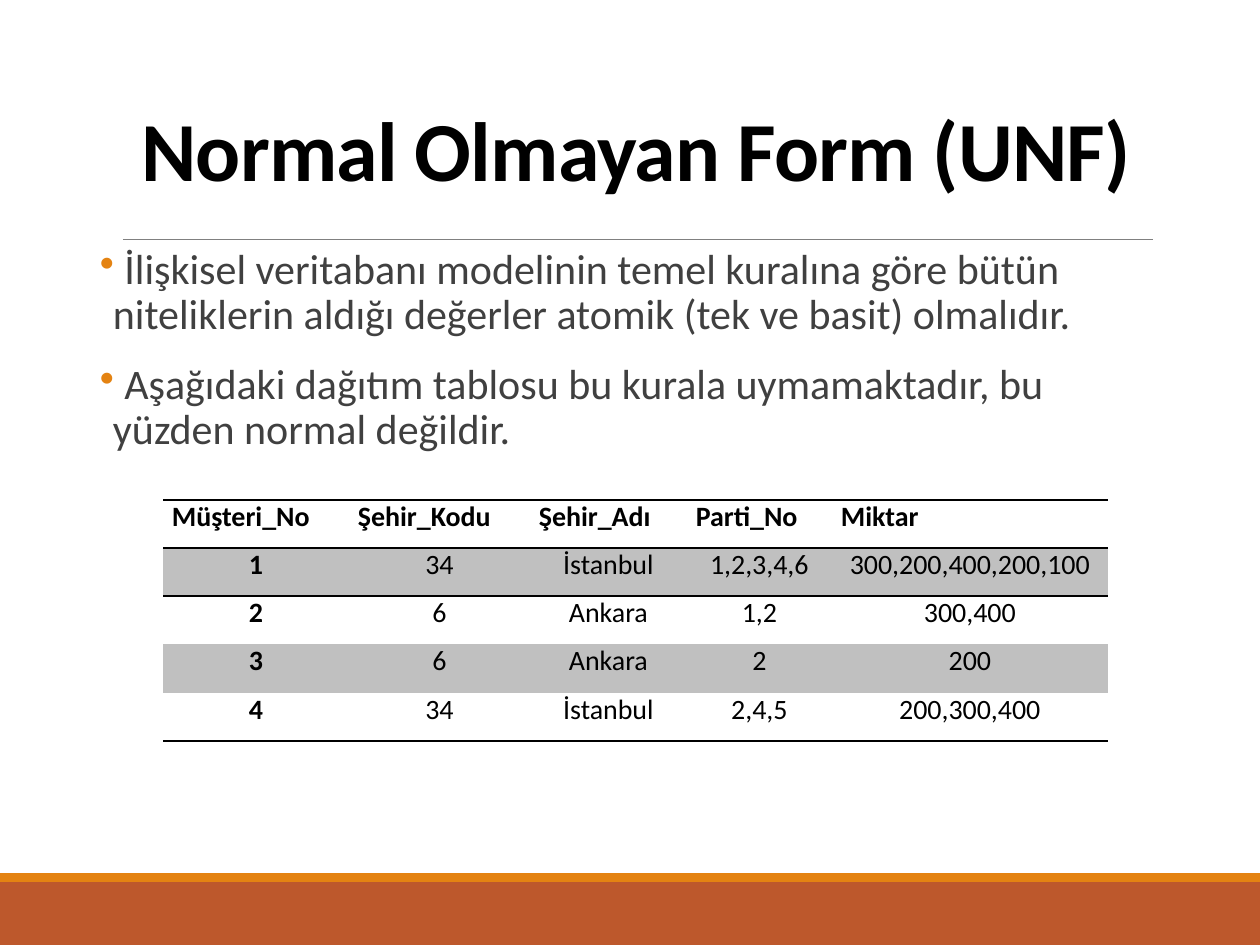
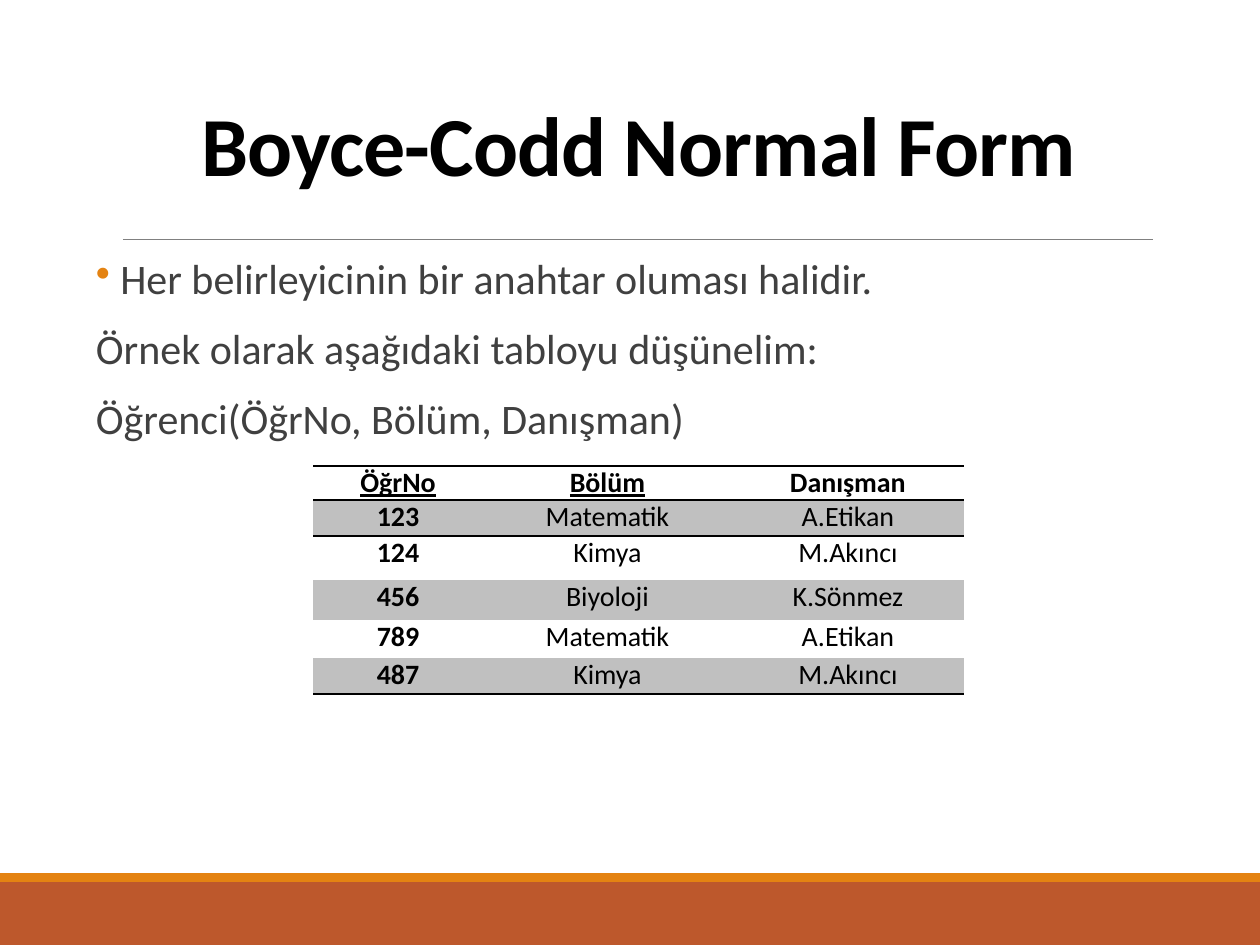
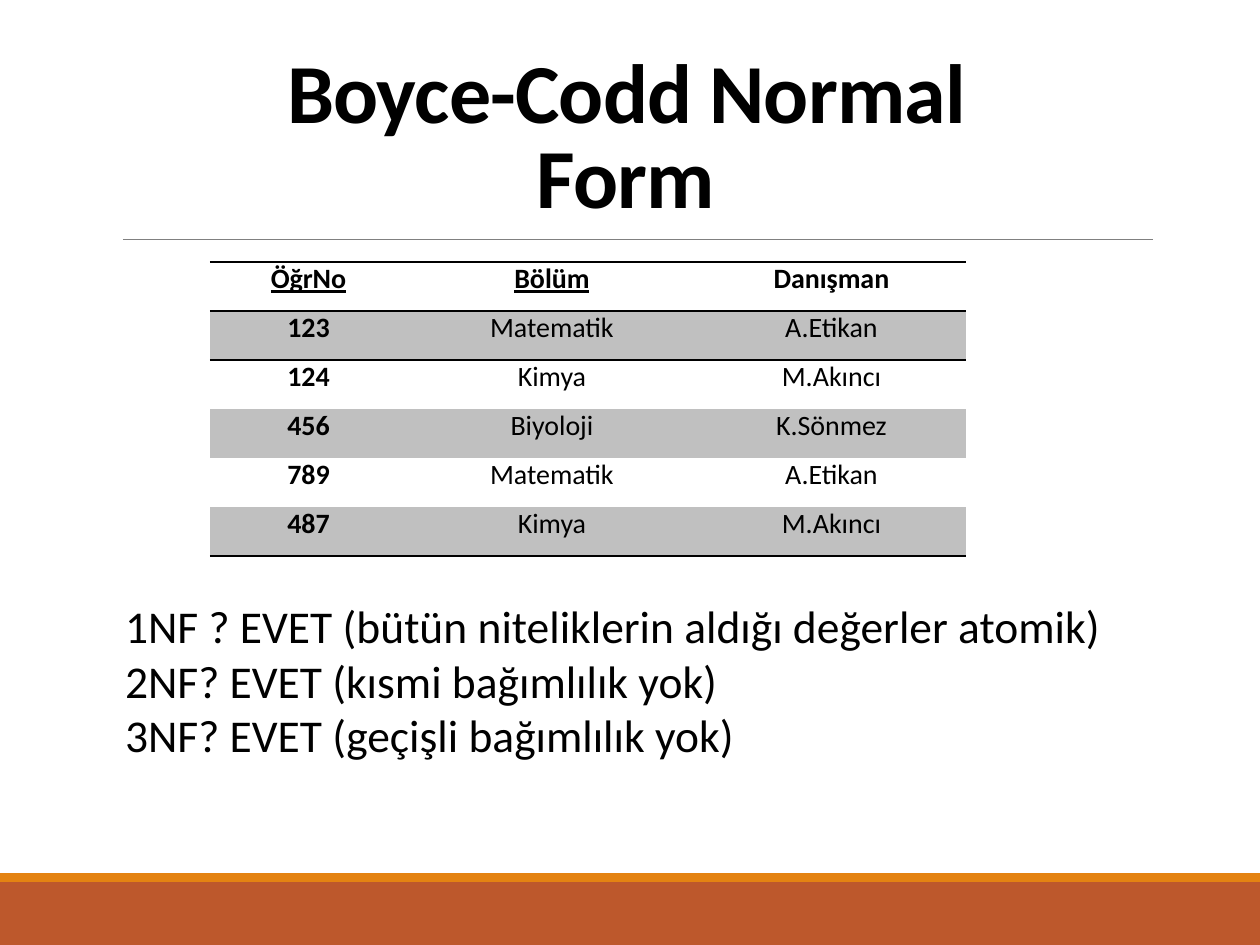
from dataclasses import dataclass

from lxml import etree
from pptx import Presentation
from pptx.dml.color import RGBColor
from pptx.enum.shapes import MSO_CONNECTOR, MSO_SHAPE
from pptx.enum.text import MSO_ANCHOR, PP_ALIGN
from pptx.oxml.ns import qn
from pptx.util import Emu, Pt

RECTANGLE = MSO_SHAPE.RECTANGLE
STRAIGHT = MSO_CONNECTOR.STRAIGHT
TOP, BOTTOM = MSO_ANCHOR.TOP, MSO_ANCHOR.BOTTOM
LEFT, CENTER = PP_ALIGN.LEFT, PP_ALIGN.CENTER
PLAIN_TABLE_STYLE = "{2D5ABB26-0587-4C30-8999-92F81FD0307C}"


@dataclass(frozen=True)
class Theme:
    font: str = "Calibri"
    black: str = "000000"
    body: str = "404040"
    rule: str = "808080"
    band: str = "BD582C"
    accent: str = "E48312"
    stripe: str = "C0C0C0"
    title_size: int = 48
    body_size: int = 24
    answer_size: int = 26
    table_size: int = 16


theme = Theme()


def px(length):
    """Convert pixels (126 to the inch) to EMU."""
    return Emu(round(length * 914400 / 126))


def add_text(slide, box, lines, size, color, align=LEFT, anchor=TOP, bold=False,
             side_inset=13, line_spacing=None, space_before=0, space_after=0,
             hanging=0, bullets=0, tracking=None):
    """Add a text box; the first `bullets` lines get a bullet."""
    shape = slide.shapes.add_textbox(*map(px, box))
    frame = shape.text_frame
    frame.word_wrap = True
    frame.vertical_anchor = anchor
    frame.margin_left = frame.margin_right = px(side_inset)
    frame.margin_top = frame.margin_bottom = px(6)
    for index, line in enumerate(lines):
        paragraph = frame.paragraphs[0] if index == 0 else frame.add_paragraph()
        run = paragraph.add_run()
        run.text = line
        if tracking is not None:
            run.font._element.set("spc", str(tracking))
        paragraph.alignment = align
        paragraph.line_spacing = line_spacing
        paragraph.space_before = Pt(space_before if index else 0)
        paragraph.space_after = Pt(space_after)
        properties = paragraph._p.get_or_add_pPr()
        properties.set("marL", str(px(hanging)))
        properties.set("indent", str(px(-hanging)))
        if index < bullets:
            bullet_color = etree.SubElement(properties, qn("a:buClr"))
            etree.SubElement(bullet_color, qn("a:srgbClr"), val=theme.accent)
            etree.SubElement(properties, qn("a:buChar"), char="•")
        font = paragraph.font
        font.name, font.size, font.bold = theme.font, Pt(size), bold
        font.color.rgb = RGBColor.from_string(color)


# Content
students = [
    ("ÖğrNo", "Bölüm", "Danışman"),
    ("123", "Matematik", "A.Etikan"),
    ("124", "Kimya", "M.Akıncı"),
    ("456", "Biyoloji", "K.Sönmez"),
    ("789", "Matematik", "A.Etikan"),
    ("487", "Kimya", "M.Akıncı"),
]
deliveries = [
    ("Müşteri_No", "Şehir_Kodu", "Şehir_Adı", "Parti_No", "Miktar"),
    ("1", "34", "İstanbul", "1,2,3,4,6", "300,200,400,200,100"),
    ("2", "6", "Ankara", "1,2", "300,400"),
    ("3", "6", "Ankara", "2", "200"),
    ("4", "34", "İstanbul", "2,4,5", "200,300,400"),
]
pages = [
    {
        "title": "Normal Olmayan Form (UNF)",
        "title_box": (116, 102, 1040, 103),
        "body_box": (100, 242, 1071, 219),
        "body": [
            " İlişkisel veritabanı modelinin temel kuralına göre bütün niteliklerin "
            "aldığı değerler atomik (tek ve basit) olmalıdır.",
            " Aşağıdaki dağıtım tablosu bu kurala uymamaktadır, bu yüzden normal "
            "değildir.",
        ],
        "bullets": 2,
        "rows": deliveries,
        "table_at": (163, 500),
        "column_widths": [186, 181, 157, 145, 276],
        "row_heights": [48, 48, 48, 49, 48],
        "header_align": LEFT,
        "key_columns": 0,
    },
    {
        "title": "Boyce-Codd Normal Form",
        "title_box": (174, 102, 929, 98),
        "body_box": (96, 252, 1084, 496),
        "body": [
            " Her belirleyicinin bir anahtar oluması halidir.",
            "Örnek olarak aşağıdaki tabloyu düşünelim:",
            "Öğrenci(ÖğrNo, Bölüm, Danışman)",
        ],
        "bullets": 1,
        "rows": students,
        "table_at": (313, 466),
        "column_widths": [170, 249, 232],
        "row_heights": [34, 36, 44, 40, 38, 36],
        "header_align": CENTER,
        "key_columns": 2,
    },
    {
        "title": "Boyce-Codd Normal Form",
        "title_box": (189, 147, 874, 85),
        "rows": students,
        "table_at": (210, 262),
        "column_widths": [197, 290, 269],
        "row_heights": [49] * len(students),
        "header_align": CENTER,
        "key_columns": 2,
        "answers": [
            "1NF ? EVET (bütün niteliklerin aldığı değerler atomik)",
            "2NF? EVET (kısmi bağımlılık yok)",
            "3NF? EVET (geçişli bağımlılık yok)",
        ],
    },
]

presentation = Presentation()
presentation.slide_width, presentation.slide_height = px(1260), px(945)

for page in pages:
    slide = presentation.slides.add_slide(presentation.slide_layouts[6])

    # Footer bands
    for top, height, color in [(882, 63, theme.band), (873, 9, theme.accent)]:
        band = slide.shapes.add_shape(RECTANGLE, 0, px(top), px(1260), px(height))
        band.shadow.inherit = False
        band.fill.solid()
        band.fill.fore_color.rgb = RGBColor.from_string(color)
        band.line.fill.background()

    # Title and the rule below it
    rule = slide.shapes.add_connector(STRAIGHT, px(123), px(239), px(1153), px(239))
    rule.line.color.rgb = RGBColor.from_string(theme.rule)
    rule.line.width = Pt(0.5)
    etree.SubElement(rule._element.spPr, qn("a:effectLst"))
    add_text(slide, page["title_box"], [page["title"]], theme.title_size, theme.black,
             align=CENTER, anchor=BOTTOM, bold=True, line_spacing=0.85, tracking=-50)

    # Body text
    if "body" in page:
        add_text(slide, page["body_box"], page["body"], theme.body_size, theme.body,
                 side_inset=0, line_spacing=0.9, space_before=12, space_after=2,
                 hanging=13, bullets=page["bullets"])

    # Table
    rows, widths, heights = page["rows"], page["column_widths"], page["row_heights"]
    left, top = page["table_at"]
    table = slide.shapes.add_table(len(rows), len(widths), px(left), px(top),
                                   px(sum(widths)), px(sum(heights))).table
    table.first_row = table.horz_banding = False
    table._tbl.tblPr.find(qn("a:tableStyleId")).text = PLAIN_TABLE_STYLE
    for column, width in zip(table.columns, widths):
        column.width = px(width)
    for row_index, values in enumerate(rows):
        table.rows[row_index].height = px(heights[row_index])
        is_header = row_index == 0
        borders = []
        if row_index <= 1:
            borders.append("a:lnT")
        if is_header or row_index == len(rows) - 1:
            borders.append("a:lnB")
        for column_index, value in enumerate(values):
            cell = table.cell(row_index, column_index)
            cell.margin_left = cell.margin_right = px(9)
            cell.margin_top = cell.margin_bottom = 0
            for tag in borders:
                border = etree.SubElement(cell._tc.get_or_add_tcPr(), qn(tag),
                                          w=str(Pt(1)))
                border_fill = etree.SubElement(border, qn("a:solidFill"))
                etree.SubElement(border_fill, qn("a:srgbClr"), val=theme.black)
            if row_index % 2:
                cell.fill.solid()
                cell.fill.fore_color.rgb = RGBColor.from_string(theme.stripe)
            else:
                cell.fill.background()
            paragraph = cell.text_frame.paragraphs[0]
            paragraph.text = value
            paragraph.alignment = page["header_align"] if is_header else CENTER
            font = paragraph.font
            font.name, font.size = theme.font, Pt(theme.table_size)
            font.color.rgb = RGBColor.from_string(theme.black)
            font.bold = is_header or column_index == 0
            font.underline = is_header and column_index < page["key_columns"]

    # Normal form answers
    if "answers" in page:
        add_text(slide, (112, 592, 1029, 178), page["answers"],
                 theme.answer_size, theme.black)

presentation.save("out.pptx")
